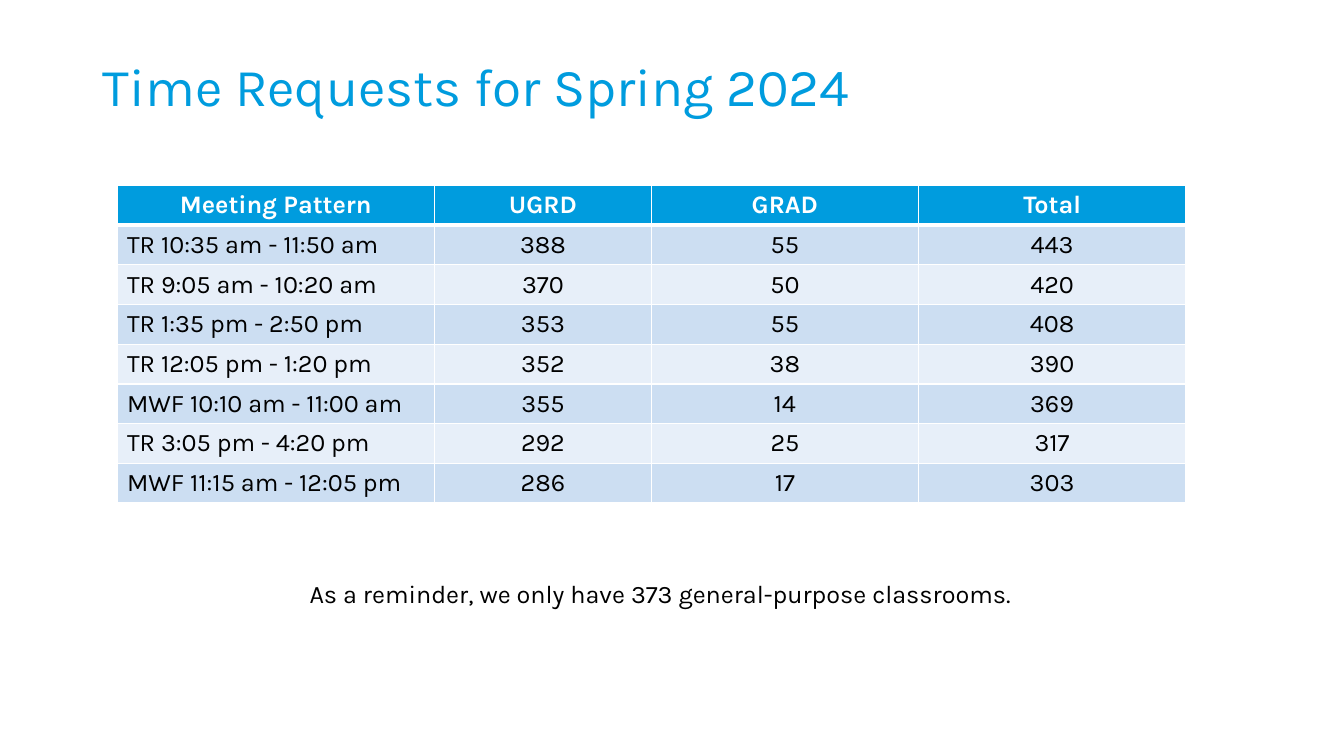
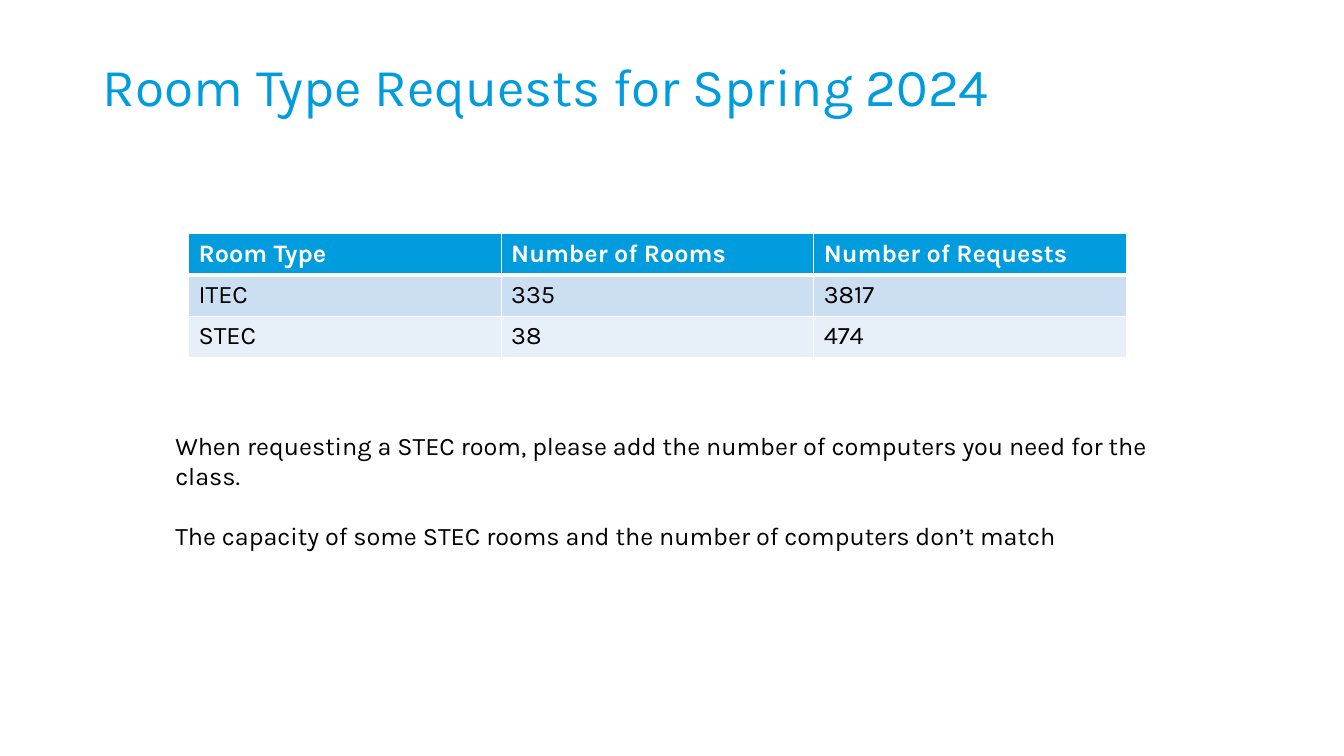
from lxml import etree
from pptx import Presentation
from pptx.dml.color import RGBColor
from pptx.enum.text import MSO_ANCHOR, MSO_AUTO_SIZE, PP_ALIGN
from pptx.oxml.ns import qn
from pptx.util import Inches, Pt

FONT = "Karla"
TITLE_SIZE = 38
BODY_SIZE = 18
COLORS = {
    "accent": "009CDE",
    "text": "000000",
    "white": "FFFFFF",
    "band_dark": "CCDEF2",
    "band_light": "E7EFF9",
}
THIN_BORDER, HEADER_RULE = 1, 3
LEFT, CENTER = PP_ALIGN.LEFT, PP_ALIGN.CENTER

TIME_REQUESTS = [
    ("Meeting Pattern", "UGRD", "GRAD", "Total"),
    ("TR 10:35 am - 11:50 am", 388, 55, 443),
    ("TR 9:05 am - 10:20 am", 370, 50, 420),
    ("TR 1:35 pm - 2:50 pm", 353, 55, 408),
    ("TR 12:05 pm - 1:20 pm", 352, 38, 390),
    ("MWF 10:10 am - 11:00 am", 355, 14, 369),
    ("TR 3:05 pm - 4:20 pm", 292, 25, 317),
    ("MWF 11:15 am - 12:05 pm", 286, 17, 303),
]
ROOM_REQUESTS = [
    ("Room Type", "Number of Rooms", "Number of Requests"),
    ("ITEC", 335, 3817),
    ("STEC", 38, 474),
]


def rgb(name):
    return RGBColor.from_string(COLORS[name])


def style_paragraph(paragraph, size=BODY_SIZE, color="text", bold=False, align=LEFT):
    paragraph.alignment = align
    font = paragraph.font
    font.name, font.size, font.bold = FONT, Pt(size), bold
    font.color.rgb = rgb(color)


def add_titled_slide(presentation, text):
    slide = presentation.slides.add_slide(presentation.slide_layouts[5])
    title = slide.shapes.title
    title.left, title.top = Inches(0.92), Inches(0.4)
    title.width, title.height = Inches(11.5), Inches(0.97)
    frame = title.text_frame
    frame.text = text
    frame.auto_size = MSO_AUTO_SIZE.NONE
    frame.vertical_anchor = MSO_ANCHOR.MIDDLE
    paragraph = frame.paragraphs[0]
    paragraph.line_spacing = 0.9
    style_paragraph(paragraph, TITLE_SIZE, "accent")
    return slide


def set_borders(cell, top, bottom):
    """Draw white borders; call before filling, as lines precede the fill in XML."""
    properties = cell._tc.get_or_add_tcPr()
    widths = {"L": THIN_BORDER, "R": THIN_BORDER, "T": top, "B": bottom}
    for side, width in widths.items():
        line = etree.SubElement(properties, qn(f"a:ln{side}"), w=str(Pt(width)))
        fill = etree.SubElement(line, qn("a:solidFill"))
        etree.SubElement(fill, qn("a:srgbClr"), val=COLORS["white"])


def style_cell(cell, row, align):
    is_header = row == 0
    set_borders(
        cell,
        top=HEADER_RULE if row == 1 else THIN_BORDER,
        bottom=HEADER_RULE if is_header else THIN_BORDER,
    )
    band = "band_dark" if row % 2 else "band_light"
    cell.fill.solid()
    cell.fill.fore_color.rgb = rgb("accent" if is_header else band)
    color = "white" if is_header else "text"
    style_paragraph(cell.text_frame.paragraphs[0], color=color, bold=is_header, align=align)


def add_data_table(slide, rows, left, top, column_widths, row_height, number_align=LEFT):
    """Add a table whose header and number columns share one alignment."""
    table = slide.shapes.add_table(
        len(rows), len(column_widths), Inches(left), Inches(top),
        Inches(sum(column_widths)), Inches(row_height * len(rows)),
    ).table
    for column, width in zip(table.columns, column_widths):
        column.width = Inches(width)
    for row, values in enumerate(rows):
        for column, value in enumerate(values):
            cell = table.cell(row, column)
            cell.text = str(value)
            is_row_label = row > 0 and column == 0
            style_cell(cell, row, LEFT if is_row_label else number_align)


def add_note(slide, paragraphs, left, top, width, height, align=LEFT):
    box = slide.shapes.add_textbox(Inches(left), Inches(top), Inches(width), Inches(height))
    frame = box.text_frame
    frame.word_wrap = True
    frame.text = "\n".join(paragraphs)
    for index, paragraph in enumerate(frame.paragraphs):
        style_paragraph(paragraph, align=align)
        if index:
            paragraph.space_before = Pt(21)


def build_time_slide(presentation):
    slide = add_titled_slide(presentation, "Time Requests for Spring 2024")
    add_data_table(slide, TIME_REQUESTS, 1.16, 1.84, [3.15, 2.15, 2.65, 2.65], 0.39, CENTER)
    add_note(
        slide, ["As a reminder, we only have 373 general-purpose classrooms."],
        1.16, 5.69, 10.78, 0.4, CENTER,
    )


def build_room_slide(presentation):
    slide = add_titled_slide(presentation, "Room Type Requests for Spring 2024")
    add_data_table(slide, ROOM_REQUESTS, 1.87, 2.32, [3.1] * 3, 0.41)
    add_note(
        slide,
        [
            "When requesting a STEC room, please add the number of computers "
            "you need for the class.",
            "The capacity of some STEC rooms and the number of computers don’t match",
        ],
        1.64, 4.22, 10.37, 1.31,
    )


def main():
    presentation = Presentation()
    presentation.slide_width, presentation.slide_height = Inches(13.33), Inches(7.5)
    build_time_slide(presentation)
    build_room_slide(presentation)
    presentation.save("out.pptx")


if __name__ == "__main__":
    main()
